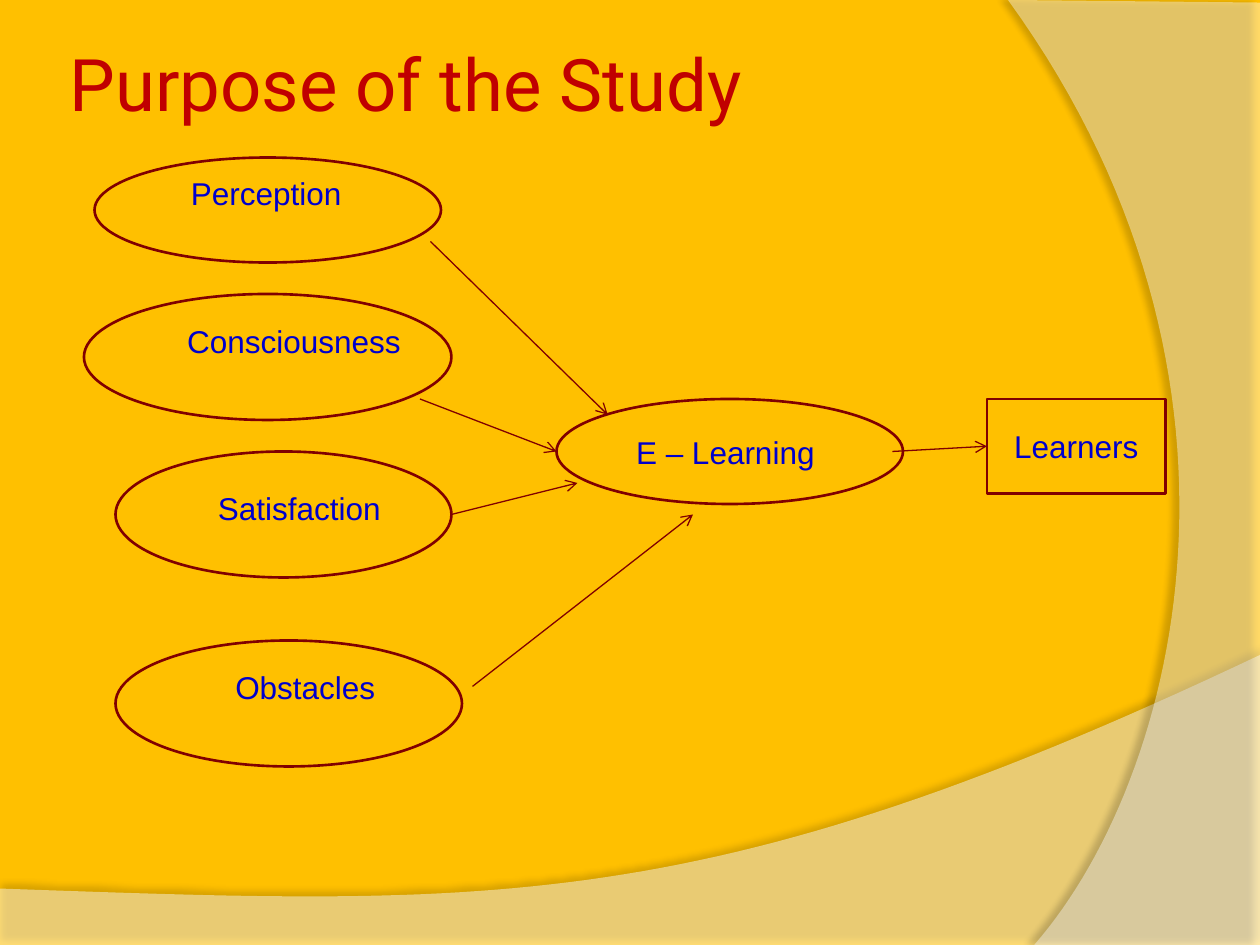
from lxml.etree import SubElement
from pptx import Presentation
from pptx.dml.color import RGBColor
from pptx.enum.shapes import MSO_CONNECTOR, MSO_SHAPE
from pptx.enum.text import MSO_ANCHOR, MSO_AUTO_SIZE, PP_ALIGN
from pptx.oxml import parse_xml
from pptx.oxml.ns import nsdecls, qn
from pptx.util import Pt

PX = 9525
GOLD = RGBColor(0xFF, 0xC0, 0x00)
WHITE = RGBColor(0xFF, 0xFF, 0xFF)
RED = RGBColor(0xC0, 0x00, 0x00)
MAROON = RGBColor(0x80, 0x00, 0x00)
BLUE = RGBColor(0x00, 0x00, 0xCC)
LABEL = {"size": Pt(18), "name": "Arial"}
TITLE = {"size": Pt(41.4), "name": "Roboto", "bold": False}
INSETS = ("margin_left", "margin_top", "margin_right", "margin_bottom")


def write(tf, text, align, font, color, frame):
    for name, value in frame.items():
        setattr(tf, name, value)
    p = tf.paragraphs[0]
    p.alignment = align
    r = p.add_run()
    r.text = text
    for name, value in font.items():
        setattr(r.font, name, value)
    r.font.color.rgb = color


def add_node(kind, box):
    sp = s.shapes.add_shape(kind, *[v * PX for v in box])
    sp.shadow.inherit = False
    sp.fill.solid()
    sp.fill.fore_color.rgb = GOLD
    sp.line.color.rgb = MAROON
    sp.line.width = Pt(1.5)
    return sp


prs = Presentation()
prs.slide_width, prs.slide_height = 960 * PX, 720 * PX
s = prs.slides.add_slide(prs.slide_layouts[5])
s.background.fill.solid()
s.background.fill.fore_color.rgb = GOLD

waves = [
    ([(0, 677), (0, 720), (960, 720)],
     [(960, 499), (537, 700), (375, 690), (0, 677)], 45, 35, 3.5, 270),
    ([(960, 2), (960, 720)],
     [(788, 720), (898, 594), (977, 288), (768, 0)], 40, 45, 4, 180),
]
for i, (corners, curve, alpha, shade, dist, angle) in enumerate(waves):
    points = list(corners)
    for step in range(61):
        t = step / 60
        weights = ((1 - t) ** 3, 3 * t * (1 - t) ** 2, 3 * t * t * (1 - t), t ** 3)
        points.append([sum(w * c[axis] for w, c in zip(weights, curve)) for axis in (0, 1)])
    points = [(round(x * PX), round(y * PX)) for x, y in points]
    fb = s.shapes.build_freeform(*points[0])
    fb.add_line_segments(points[1:], close=True)
    sp = fb.convert_to_shape()
    sp.fill.solid()
    sp.fill.fore_color.rgb = WHITE
    sp.line.fill.background()
    spPr = sp._element.spPr
    color = spPr.find(qn("a:solidFill")).find(qn("a:srgbClr"))
    SubElement(color, qn("a:alpha"), val=str(alpha * 1000))
    spPr.append(parse_xml(
        f'<a:effectLst {nsdecls("a")}><a:outerShdw blurRad="{Pt(4)}" dist="{Pt(dist)}" '
        f'dir="{angle * 60000}" algn="ctr" rotWithShape="0"><a:srgbClr val="000000">'
        f'<a:alpha val="{shade * 1000}"/></a:srgbClr></a:outerShdw></a:effectLst>'))
    s.shapes._spTree.insert(2 + i, sp._element)

title = s.shapes.title
for name, value in zip(("left", "top", "width", "height"), (48, 29, 784, 67)):
    setattr(title, name, value * PX)
frame = {name: 5 * PX for name in INSETS}
frame.update(vertical_anchor=MSO_ANCHOR.MIDDLE, word_wrap=True, auto_size=MSO_AUTO_SIZE.NONE)
write(title.text_frame, "Purpose of the Study", PP_ALIGN.LEFT, TITLE, RED, frame)

factors = [
    ("Perception", (72, 120, 264, 80), (136, 128, 184), PP_ALIGN.LEFT),
    ("Consciousness", (64, 224, 280, 96), (128, 241, 192), PP_ALIGN.CENTER),
    ("Satisfaction", (88, 344, 256, 96), (128, 368, 200), PP_ALIGN.CENTER),
    ("Obstacles ", (88, 488, 264, 96), (112, 504, 248), PP_ALIGN.CENTER),
]
frame = {"word_wrap": True, "auto_size": MSO_AUTO_SIZE.SHAPE_TO_FIT_TEXT}
for text, oval, label, align in factors:
    add_node(MSO_SHAPE.OVAL, oval)
    tb = s.shapes.add_textbox(*[v * PX for v in (*label, 38)])
    write(tb.text_frame, text, align, LABEL, BLUE, frame)

frame = {"word_wrap": True, "vertical_anchor": MSO_ANCHOR.MIDDLE}
elearning = add_node(MSO_SHAPE.OVAL, (424, 304, 264, 80))
write(elearning.text_frame, "E – Learning ", PP_ALIGN.CENTER, LABEL, BLUE, frame)
learners = add_node(MSO_SHAPE.RECTANGLE, (752, 304, 136, 72))
write(learners.text_frame, "Learners", PP_ALIGN.CENTER, LABEL, BLUE, frame)

arrows = [
    (328, 184, 463, 316),
    (320, 304, 424, 344),
    (344, 392, 440, 368),
    (360, 523, 528, 392),
    (680, 344, 752, 340),
]
for ends in arrows:
    cxn = s.shapes.add_connector(MSO_CONNECTOR.STRAIGHT, *[v * PX for v in ends])
    cxn.line.color.rgb = MAROON
    cxn.line.width = Pt(0.75)
    SubElement(cxn.line._get_or_add_ln(), qn("a:tailEnd"), type="arrow")
    SubElement(cxn._element.spPr, qn("a:effectLst"))
cxn.end_connect(learners, 1)

prs.save("out.pptx")
